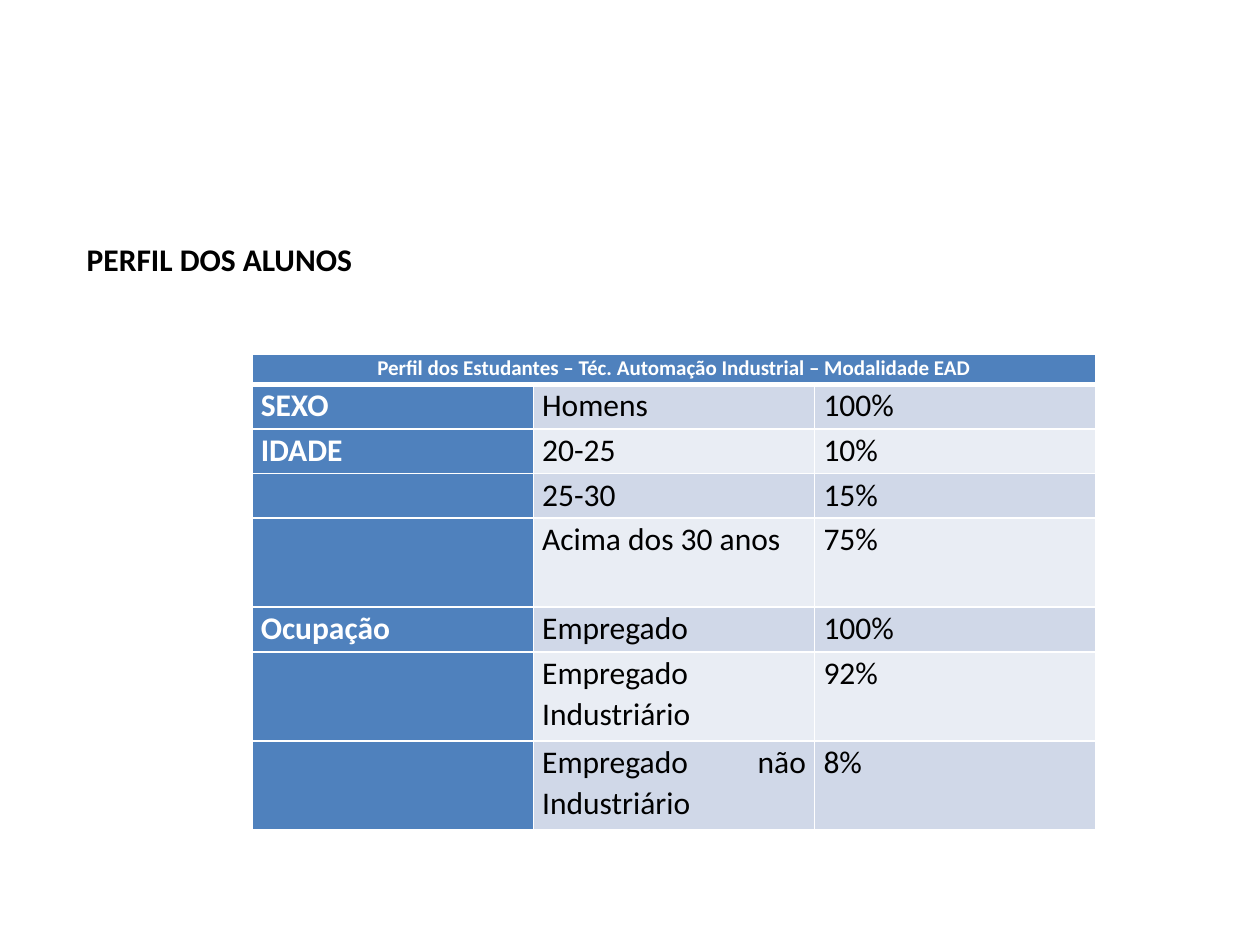
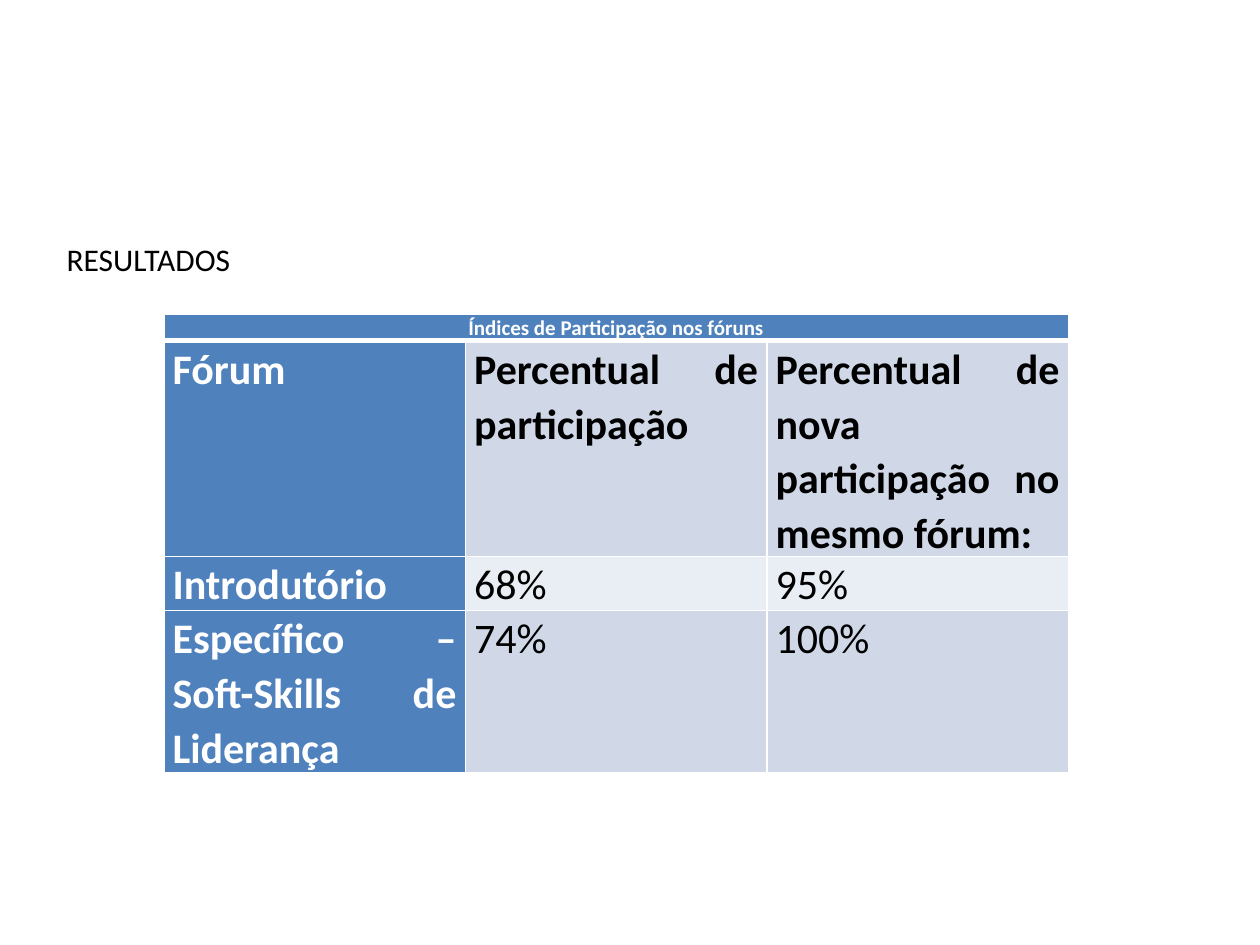
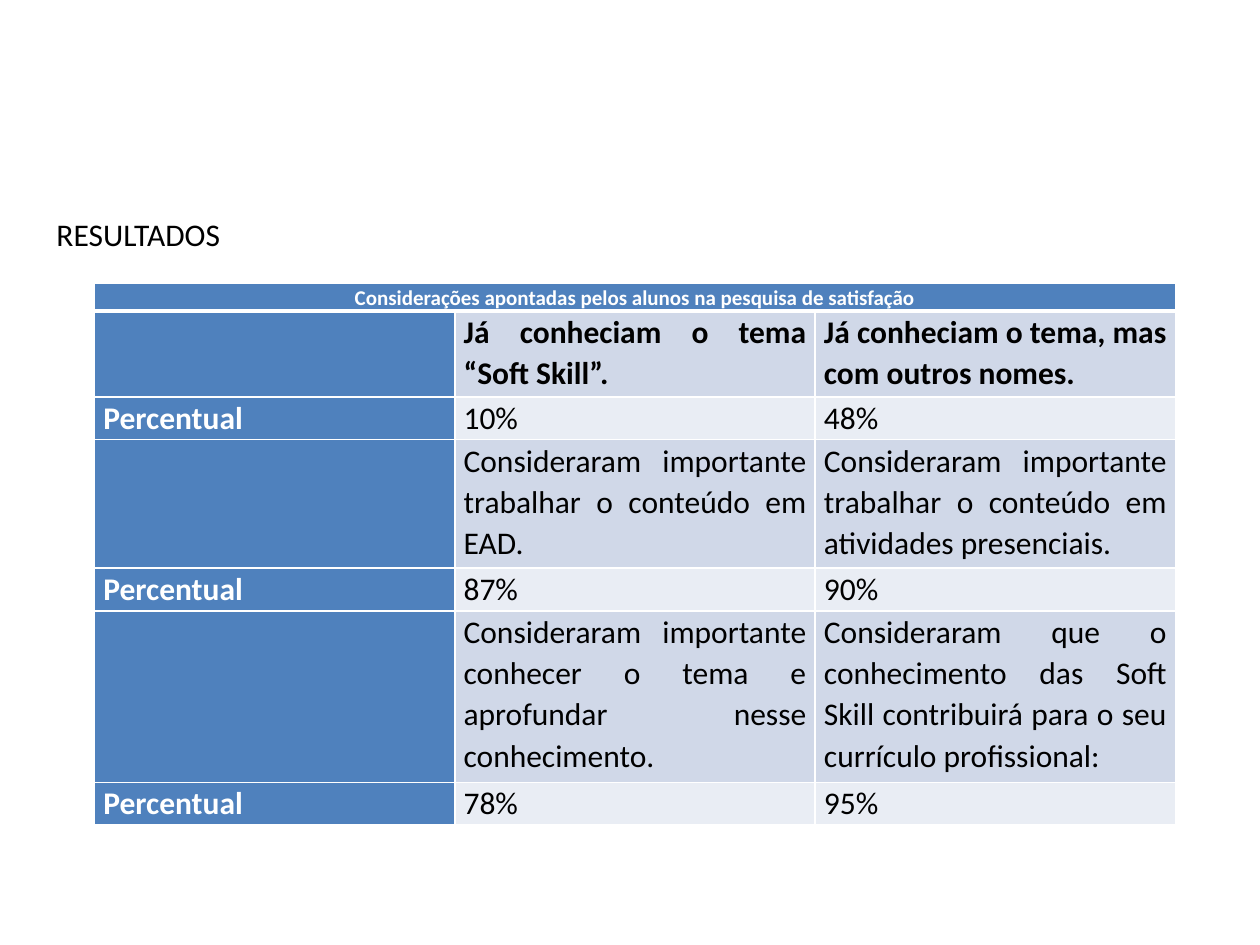
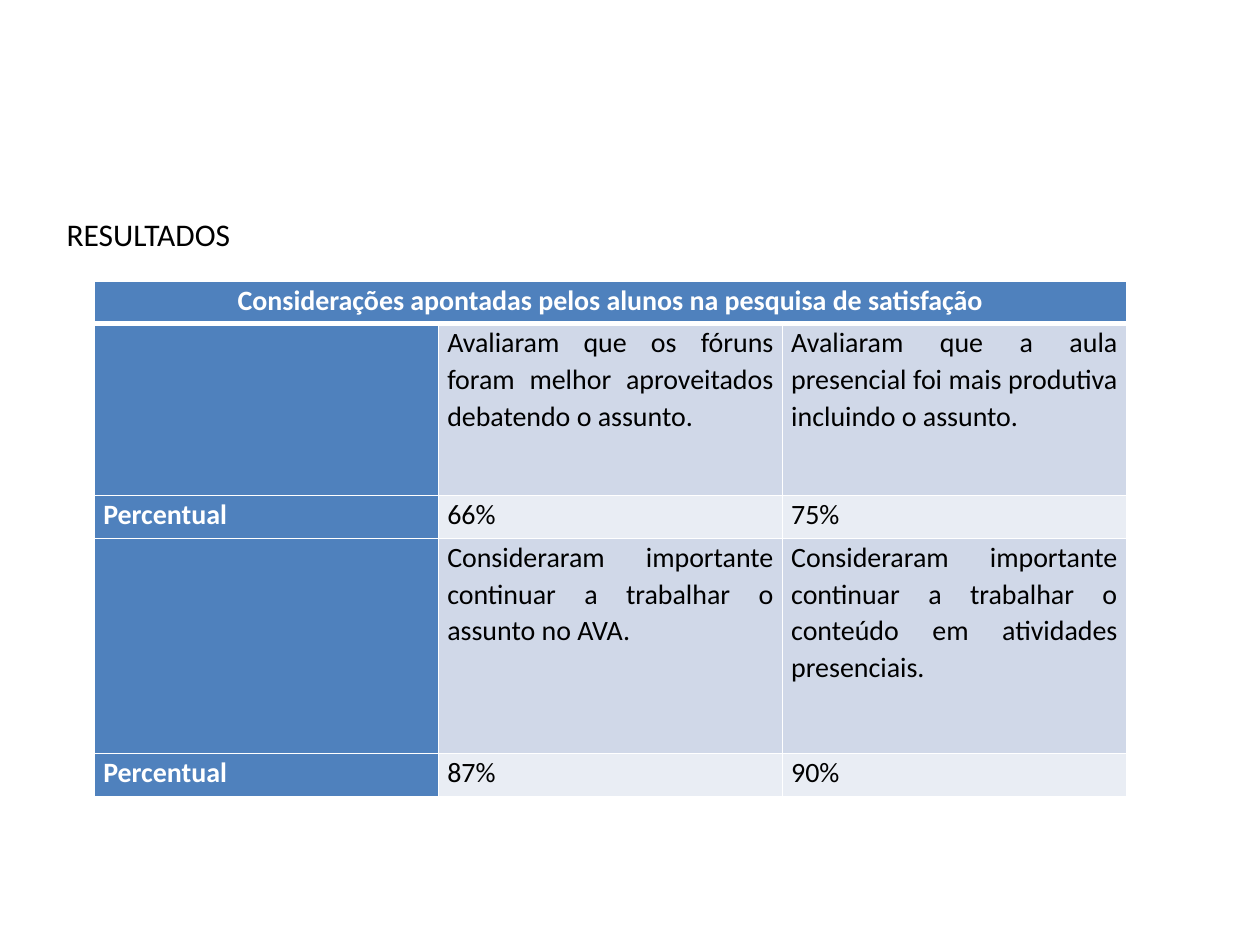
import pptx
import pptx.dml.color
import pptx.enum.text
import pptx.oxml
import pptx.oxml.ns
import pptx.util

GRID_COLUMNS, GRID_ROWS = 100, 75
BLUE, WHITE, BLACK = "4F81BD", "FFFFFF", "000000"
BANDS = ("D0D8E8", "E9EDF4")
ALIGN = pptx.enum.text.PP_ALIGN
SURVEY_TITLE = "Considerações apontadas pelos alunos na pesquisa de satisfação"


def color(value):
    return pptx.dml.color.RGBColor.from_string(value)


def style_font(font, **formats):
    """Set size, bold and hex colour on a Calibri font."""
    font.name = "Calibri"
    font.color.rgb = color(formats.pop("color"))
    font.size = pptx.util.Pt(formats.pop("size"))
    for name, value in formats.items():
        setattr(font, name, value)


class SlideBuilder:
    """Keeps the shared style and the slide being filled."""

    def __init__(self):
        self.deck = pptx.Presentation()
        self.deck.slide_width = pptx.util.Inches(10)
        self.deck.slide_height = pptx.util.Inches(7.5)
        self.page = None

    def x(self, columns):
        return round(self.deck.slide_width * columns / GRID_COLUMNS)

    def y(self, rows):
        return round(self.deck.slide_height * rows / GRID_ROWS)

    def new_page(self):
        self.page = self.deck.slides.add_slide(self.deck.slide_layouts[6])

    def heading(self, text, left, top, width=69.3, bold=False, wrap=True):
        box = self.page.shapes.add_textbox(self.x(left), self.y(top), self.x(width), self.y(4))
        frame = box.text_frame
        frame.word_wrap = wrap
        frame.auto_size = pptx.enum.text.MSO_AUTO_SIZE.SHAPE_TO_FIT_TEXT
        span = frame.paragraphs[0].add_run()
        span.text = text
        style_font(span.font, size=18, color=BLACK, bold=bold)

    def borders(self, cell, **widths):
        """Draw white cell borders; must run before the cell is filled."""
        properties = cell._tc.get_or_add_tcPr()
        for side in "LRTB":
            width = pptx.util.Pt(widths.get(side, 1))
            properties.append(pptx.oxml.parse_xml(
                f'<a:ln{side} {pptx.oxml.ns.nsdecls("a")} w="{width}"><a:solidFill>'
                f'<a:srgbClr val="{WHITE}"/></a:solidFill></a:ln{side}>'))

    def cell(self, cell, text, fill, align, border, **formats):
        margins = {"margin_left": 0.07, "margin_right": 0.07, "margin_top": 0, "margin_bottom": 0}
        for name, inches in margins.items():
            setattr(cell, name, pptx.util.Inches(inches))
        self.borders(cell, **border)
        cell.fill.solid()
        cell.fill.fore_color.rgb = color(fill)
        if text:
            para = cell.text_frame.paragraphs[0]
            para.alignment = align
            para.line_spacing = 1.07
            span = para.add_run()
            span.text = text
            style_font(span.font, **formats)

    def table(self, title, rows, place, line_height, title_height,
              title_size=12, size=18, bold_lead=False):
        """Draw a titled table; each row is (number of lines, label, value, value)."""
        left, top, width = place
        heights = [title_height] + [line_height * lines for lines, *_ in rows]
        table = self.page.shapes.add_table(
            len(heights), 3, self.x(left), self.y(top), self.x(width), self.y(sum(heights))).table
        table.first_row = table.horz_banding = False
        for row, height in zip(table.rows, heights):
            row.height = self.y(height)
        for column in table.columns:
            column.width = self.x(width / 3)

        table.cell(0, 0).merge(table.cell(0, 2))
        for index, text in enumerate((title, "", "")):
            self.cell(table.cell(0, index), text, BLUE, ALIGN.CENTER, {"B": 3},
                      size=title_size, color=WHITE, bold=True)
        for number, (_, *texts) in enumerate(rows):
            for index, text in enumerate(texts):
                label, lead = index == 0, number == 0
                self.cell(table.cell(number + 1, index), text,
                          BLUE if label else BANDS[number % 2], ALIGN.JUSTIFY,
                          {"T": 3} if lead else {}, size=size,
                          color=WHITE if label else BLACK,
                          bold=label or (bold_lead and lead))


def student_profile(builder):
    builder.new_page()
    rows = [
        (1, "SEXO", "Homens", "100%"),
        (1, "IDADE", "20-25", "10%"),
        (1, "", "25-30", "15%"),
        (2, "", "Acima dos 30 anos", "75%"),
        (1, "Ocupação", "Empregado", "100%"),
        (2, "", "Empregado Industriário", "92%"),
        (2, "", "Empregado não Industriário", "8%"),
    ]
    builder.table("Perfil dos Estudantes – Téc. Automação Industrial – Modalidade EAD",
                  rows, (20, 28.1, 67), line_height=3.54, title_height=2.4)
    builder.heading("PERFIL DOS ALUNOS", 5.9, 18.6, width=23.3, bold=True, wrap=False)


def forum_participation(builder):
    builder.new_page()
    rows = [
        (4, "Fórum", "Percentual de participação",
         "Percentual de nova participação no mesmo fórum:"),
        (1, "Introdutório", "68%", "95%"),
        (3, "Específico – Soft-Skills de Liderança", "74%", "100%"),
    ]
    builder.table("Índices de Participação nos fóruns", rows, (13, 24.9, 71.8),
                  line_height=4.25, title_height=2, size=24, bold_lead=True)
    builder.heading("RESULTADOS", 4.3, 18.6)


def survey_topic(builder):
    builder.new_page()
    rows = [
        (2, "", "Já conheciam o tema “Soft Skill”.",
         "Já conheciam o tema, mas com outros nomes."),
        (1, "Percentual", "10%", "48%"),
        (3, "", "Consideraram importante trabalhar o conteúdo em EAD.",
         "Consideraram importante trabalhar o conteúdo em atividades presenciais."),
        (1, "Percentual", "87%", "90%"),
        (4, "", "Consideraram importante conhecer o tema e aprofundar nesse conhecimento.",
         "Consideraram que o conhecimento das Soft Skill contribuirá "
         "para o seu currículo profissional:"),
        (1, "Percentual", "78%", "95%"),
    ]
    builder.table(SURVEY_TITLE, rows, (7.5, 22.5, 85.8),
                  line_height=3.4, title_height=2.2, bold_lead=True)
    builder.heading("RESULTADOS", 3.5, 16.6)


def survey_classes(builder):
    builder.new_page()
    rows = [
        (4, "", "Avaliaram que os fóruns foram melhor aproveitados debatendo o assunto.",
         "Avaliaram que a aula presencial foi mais produtiva incluindo o assunto."),
        (1, "Percentual", "66%", "75%"),
        (5, "", "Consideraram importante continuar a trabalhar o assunto no AVA.",
         "Consideraram importante continuar a trabalhar o conteúdo em atividades presenciais."),
        (1, "Percentual", "87%", "90%"),
    ]
    builder.table(SURVEY_TITLE, rows, (7.5, 22.3, 81.9),
                  line_height=3.41, title_height=3.4, title_size=16, size=16)
    builder.heading("RESULTADOS", 4.3, 16.6)


def main():
    builder = SlideBuilder()
    for build in (student_profile, forum_participation, survey_topic, survey_classes):
        build(builder)
    builder.deck.save("out.pptx")


if __name__ == "__main__":
    main()
